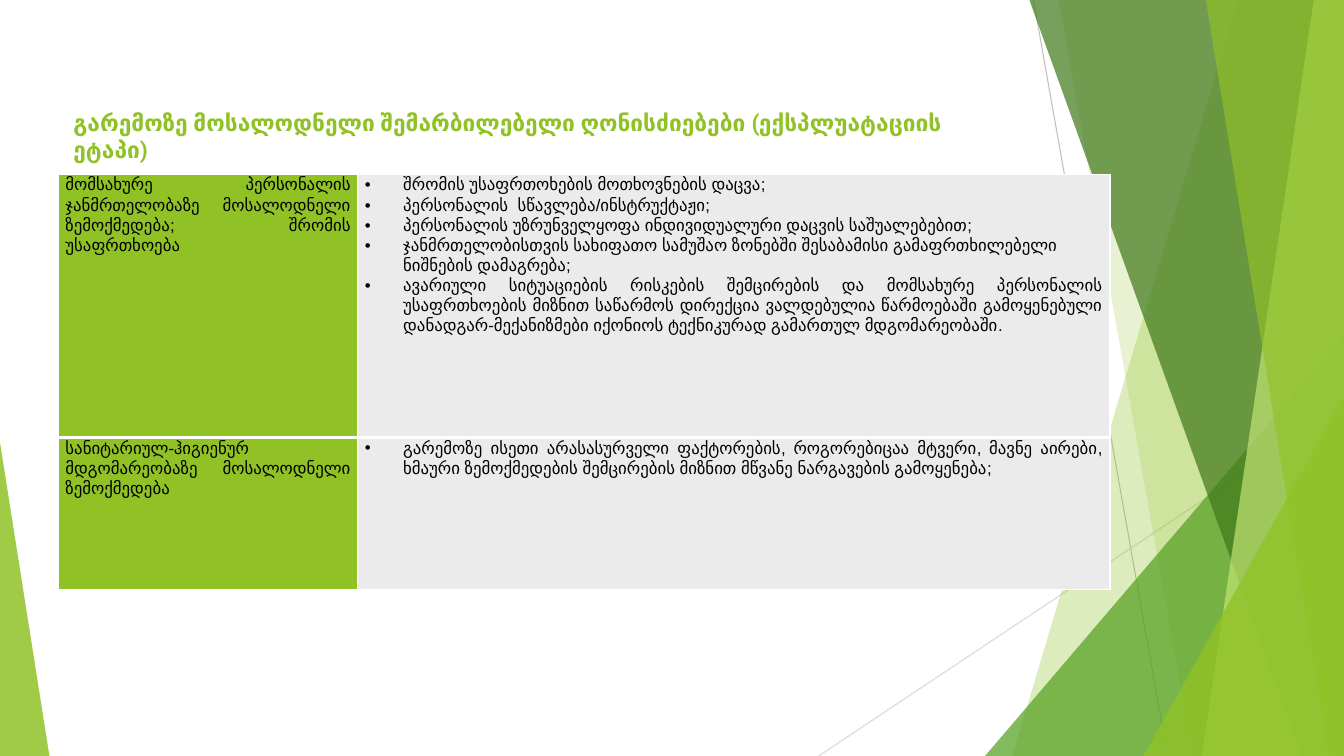
from lxml.etree import SubElement
from pptx import Presentation
from pptx.dml.color import RGBColor
from pptx.enum.shapes import MSO_CONNECTOR as Connector, MSO_SHAPE as Shape
from pptx.enum.text import MSO_ANCHOR as Anchor, PP_ALIGN as Align
from pptx.oxml import parse_xml
from pptx.oxml.ns import nsdecls, qn
from pptx.util import Emu, Inches, Pt

LIME = RGBColor(0x90, 0xC2, 0x26)
GREEN = RGBColor(0x54, 0xA0, 0x21)
FOREST = RGBColor(0x3F, 0x78, 0x19)
PALE_LIME = RGBColor(0xC0, 0xE4, 0x74)
PANEL = RGBColor(0xEB, 0xEB, 0xEB)
WHITE = RGBColor(0xFF, 0xFF, 0xFF)
BLACK = RGBColor(0, 0, 0)
GREY = RGBColor(0xBF, 0xBF, 0xBF)
LIGHT_GREY = RGBColor(0xD9, 0xD9, 0xD9)

WIDTH, HEIGHT = 13.33, 7.5

TITLE = "გარემოზე მოსალოდნელი შემარბილებელი ღონისძიებები (ექსპლუატაციის ეტაპი)"
TITLE_BOX = (0.63, 1.03, 9.4, 0.43)

LEFT, JUST = Align.LEFT, Align.JUSTIFY
IMPACTS = [
    ("მომსახურე პერსონალის ჯანმრთელობაზე მოსალოდნელი ზემოქმედება; შრომის უსაფრთხოება", [
        ("შრომის უსაფრთოხების მოთხოვნების დაცვა;", LEFT),
        ("პერსონალის  სწავლება/ინსტრუქტაჟი;", LEFT),
        ("პერსონალის უზრუნველყოფა ინდივიდუალური დაცვის საშუალებებით;", LEFT),
        ("ჯანმრთელობისთვის სახიფათო სამუშაო ზონებში შესაბამისი გამაფრთხილებელი ნიშნების დამაგრება;", LEFT),
        ("ავარიული სიტუაციების რისკების შემცირების და მომსახურე პერსონალის უსაფრთხოების მიზნით "
         "საწარმოს დირექცია ვალდებულია წარმოებაში გამოყენებული დანადგარ-მექანიზმები იქონიოს "
         "ტექნიკურად გამართულ მდგომარეობაში.", JUST),
    ]),
    ("სანიტარიულ-ჰიგიენურ მდგომარეობაზე მოსალოდნელი ზემოქმედება", [
        ("გარემოზე ისეთი არასასურველი ფაქტორების, როგორებიცაა მტვერი, მავნე აირები, ხმაური "
         "ზემოქმედების შემცირების მიზნით მწვანე ნარგავების გამოყენება;", JUST),
    ]),
]
TABLE_LEFT, TABLE_TOP = 0.58, 1.73
COLUMNS, ROWS = (2.97, 7.46), (2.61, 1.51)
INDENT = 0.38

RAYS = [
    ((10.25, 0), (11.58, HEIGHT), GREY),
    ((WIDTH, 4.03), (8.12, HEIGHT), LIGHT_GREY),
]
BACK_BANDS = [(12.28, 10.04, LIME, 30), (10.5, 11.83, LIME, 20)]
FRONT_BANDS = [(10.21, 12.91, FOREST, 70), (13.03, 11.92, PALE_LIME, 70), (11.96, 13.18, LIME, 65)]
BACK_PEAKS = [(9.77, WIDTH, 3.33, 1, GREEN, 72)]
FRONT_PEAKS = [(11.34, WIDTH, 3.93, 1, LIME, 80), (0, 0.49, 4.39, 0, LIME, 85)]

deck = Presentation()
deck.slide_width, deck.slide_height = Inches(WIDTH), Inches(HEIGHT)
slide = deck.slides.add_slide(deck.slide_layouts[6])
shapes = slide.shapes


def inches(*lengths):
    return [Inches(length) for length in lengths]


def paint(facet, color, opacity):
    facet.shadow.inherit = False
    facet.fill.solid()
    facet.fill.fore_color.rgb = color
    facet.line.fill.background()
    tint = facet._element.spPr.find(".//" + qn("a:srgbClr"))
    SubElement(tint, qn("a:alpha")).set("val", str(opacity * 1000))


def draw_ray(start, end, color):
    ray = shapes.add_connector(Connector.STRAIGHT, *inches(*start, *end))
    ray.line.color.rgb = color
    ray.line.width = Pt(0.75)
    SubElement(ray._element.spPr, qn("a:effectLst"))


def draw_band(top_x, bottom_x, color, opacity):
    outline = shapes.build_freeform(Inches(top_x), 0)
    corners = [(WIDTH, 0), (WIDTH, HEIGHT), (bottom_x, HEIGHT)]
    outline.add_line_segments([inches(*corner) for corner in corners])
    paint(outline.convert_to_shape(), color, opacity)


def draw_peak(left, right, top, apex, color, opacity):
    peak = shapes.add_shape(Shape.ISOSCELES_TRIANGLE, *inches(left, top, right - left, HEIGHT - top))
    peak.adjustments[0] = apex
    paint(peak, color, opacity)


def write(paragraph, words, font, size, color, bold=False):
    run = paragraph.add_run()
    run.text = words
    run.font.name, run.font.size, run.font.bold = font, Pt(size), bold
    run.font.color.rgb = color


def fill_cell(cell, items, color, bulleted, edges):
    cell.margin_left = cell.margin_right = Inches(0.07)
    cell.margin_top = cell.margin_bottom = Emu(0)
    cell.fill.solid()
    cell.fill.fore_color.rgb = color
    for number, (words, align) in enumerate(items):
        frame = cell.text_frame
        paragraph = frame.add_paragraph() if number else frame.paragraphs[0]
        paragraph.alignment = align
        paragraph.line_spacing = 1.07
        write(paragraph, words, "Arial", 12, BLACK)
        if bulleted:
            props = paragraph._p.get_or_add_pPr()
            props.set("marL", str(Inches(INDENT)))
            props.set("indent", str(-Inches(INDENT)))
            SubElement(props, qn("a:buFont")).set("typeface", "Arial")
            SubElement(props, qn("a:buChar")).set("char", "•")
    for place, (side, points) in enumerate(edges.items()):
        cell._tc.get_or_add_tcPr().insert(place, parse_xml(
            f'<a:ln{side} {nsdecls("a")} w="{Pt(points)}"><a:solidFill>'
            f'<a:srgbClr val="{WHITE}"/></a:solidFill></a:ln{side}>'))


for ray in RAYS:
    draw_ray(*ray)
for bands, peaks in ((BACK_BANDS, BACK_PEAKS), (FRONT_BANDS, FRONT_PEAKS)):
    for band in bands:
        draw_band(*band)
    for peak in peaks:
        draw_peak(*peak)

heading = shapes.add_textbox(*inches(*TITLE_BOX)).text_frame
heading.word_wrap = True
heading.vertical_anchor = Anchor.TOP
write(heading.paragraphs[0], TITLE, "Roboto", 16.2, LIME, bold=True)

table = shapes.add_table(len(ROWS), len(COLUMNS),
                         *inches(TABLE_LEFT, TABLE_TOP, sum(COLUMNS), sum(ROWS))).table
table.first_row = table.horz_banding = False
for column, width in zip(table.columns, COLUMNS):
    column.width = Inches(width)
for number, (row, height, (impact, measures)) in enumerate(zip(table.rows, ROWS, IMPACTS)):
    row.height = Inches(height)
    edges = {"L": 1, "R": 1, "T": 3 if number else 1, "B": 1 if number else 3}
    fill_cell(row.cells[0], [(impact, JUST)], LIME, False, edges)
    fill_cell(row.cells[1], measures, PANEL, True, edges)

deck.save("out.pptx")
